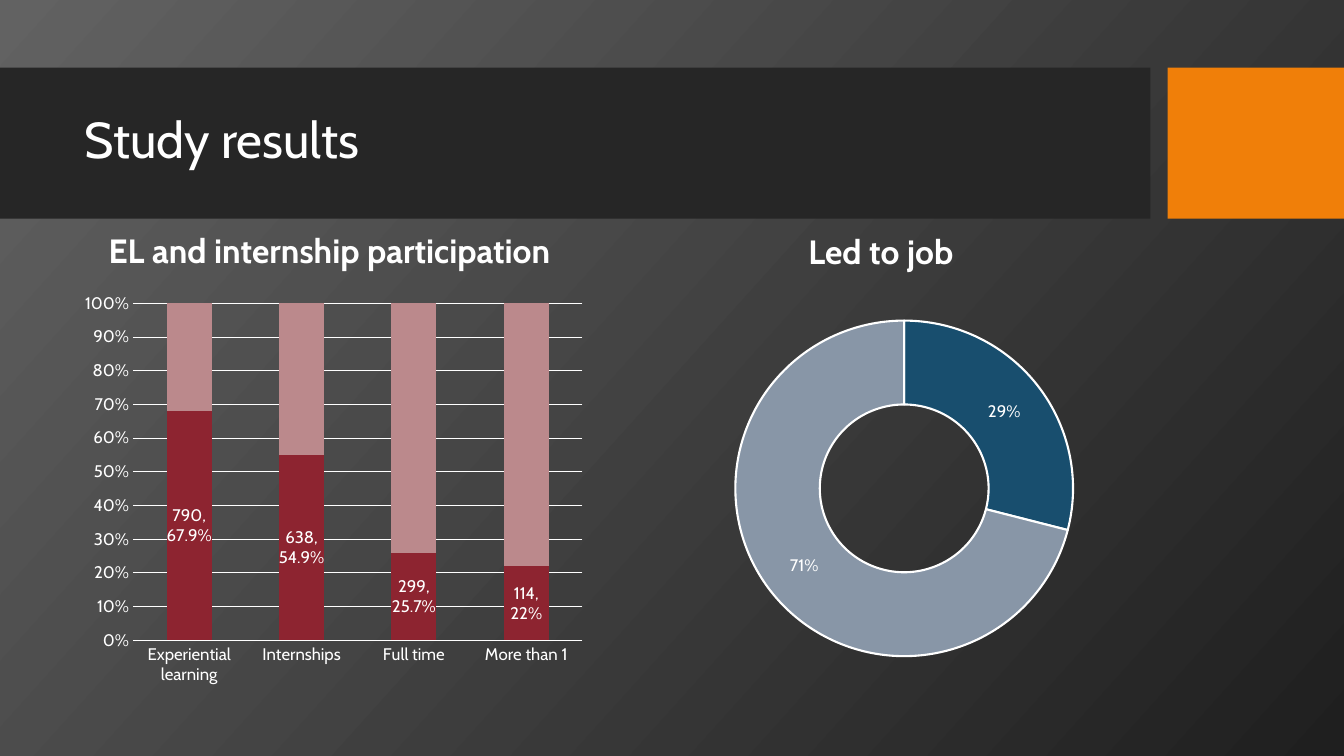
from lxml import etree
from pptx import Presentation
from pptx.chart.data import CategoryChartData
from pptx.dml.color import RGBColor
from pptx.enum.chart import XL_CHART_TYPE, XL_TICK_MARK
from pptx.enum.shapes import MSO_SHAPE
from pptx.enum.text import MSO_ANCHOR
from pptx.oxml.ns import qn
from pptx.util import Inches, Pt

STACKED = XL_CHART_TYPE.COLUMN_STACKED_100
DOUGHNUT = XL_CHART_TYPE.DOUGHNUT
NO_TICK = XL_TICK_MARK.NONE
RECT = MSO_SHAPE.RECTANGLE
MIDDLE = MSO_ANCHOR.MIDDLE
BOTTOM = MSO_ANCHOR.BOTTOM
WHITE = "FFFFFF"


def color(value):
    return RGBColor.from_string(value)


def apply(target, values):
    for name, value in values.items():
        setattr(target, name, value)


def paint(fill, value):
    fill.solid()
    fill.fore_color.rgb = color(value)


def draw_line(line, width):
    paint(line.fill, WHITE)
    line.width = Pt(width)


class SlideBuilder:
    face = "Cabin"

    def __init__(self, slide):
        self.slide = slide

    def style(self, font, size, bold=False):
        apply(font, {"name": self.face, "size": Pt(size), "bold": bold})
        font.color.rgb = color(WHITE)

    def background(self, start, end, angle):
        fill = self.slide.background.fill
        fill.gradient()
        fill.gradient_angle = 360 - angle
        for stop, value, position in zip(fill.gradient_stops, (start, end), (0, 1)):
            stop.color.rgb = color(value)
            stop.position = position

    def band(self, box, value):
        band = self.slide.shapes.add_shape(RECT, *map(Inches, box))
        band.shadow.inherit = False
        paint(band.fill, value)
        band.line.fill.background()

    def text(self, box, words, size, anchor, bold=False):
        frame = self.slide.shapes.add_textbox(*map(Inches, box)).text_frame
        apply(frame, {"word_wrap": True, "vertical_anchor": anchor})
        paragraph = frame.paragraphs[0]
        paragraph.line_spacing = 0.9
        run = paragraph.add_run()
        run.text = words
        self.style(run.font, size, bold)

    def chart(self, kind, box, categories, series):
        data = CategoryChartData()
        data.categories = categories
        for name, values in series.items():
            data.add_series(name, values)
        chart = self.slide.shapes.add_chart(kind, *map(Inches, box), data).chart
        apply(chart, {"has_legend": False, "has_title": False})
        self.style(chart.font, 10)
        return chart

    def participation(self, box, categories, series, fills, captions):
        chart = self.chart(STACKED, box, categories, series)
        plot = chart.plots[0]
        apply(plot, {"gap_width": 150, "overlap": 100, "vary_by_categories": False})
        for axis in (chart.category_axis, chart.value_axis):
            apply(axis, {"major_tick_mark": NO_TICK, "minor_tick_mark": NO_TICK})
            self.style(axis.tick_labels.font, 12)
        draw_line(chart.category_axis.format.line, 0.75)
        chart.value_axis.format.line.fill.background()
        draw_line(chart.value_axis.major_gridlines.format.line, 0.75)
        apply(chart.value_axis.tick_labels,
              {"number_format": "0%", "number_format_is_linked": False})
        for part, value in zip(plot.series, fills):
            paint(part.format.fill, value)
        participants = plot.series[0]
        self.style(participants.data_labels.font, 12)
        participants.data_labels.show_value = True
        for index, caption in enumerate(captions):
            frame = participants.points[index].data_label.text_frame
            frame.text = caption
            for paragraph in frame.paragraphs:
                for run in paragraph.runs:
                    self.style(run.font, 12)

    def outcome(self, box, categories, series, fills, hole, area):
        chart = self.chart(DOUGHNUT, box, categories, series)
        plot = chart.plots[0]
        plot.vary_by_categories = True
        for index, value in enumerate(fills):
            slice_format = plot.series[0].points[index].format
            paint(slice_format.fill, value)
            draw_line(slice_format.line, 1.5)
        labels = plot.series[0].data_labels
        apply(labels, {"show_percentage": True, "show_value": False,
                       "number_format": "0%", "number_format_is_linked": False})
        self.style(labels.font, 12)
        root = chart.element
        root.find(".//" + qn("c:holeSize")).set("val", str(hole))
        plot_area = root.find(".//" + qn("c:plotArea"))
        layout = plot_area.find(qn("c:layout"))
        if layout is None:
            layout = etree.Element(qn("c:layout"))
            plot_area.insert(0, layout)
        manual = etree.SubElement(layout, qn("c:manualLayout"))
        settings = {"layoutTarget": "inner", "xMode": "edge", "yMode": "edge"}
        settings.update(zip("xywh", area))
        for name, value in settings.items():
            etree.SubElement(manual, qn("c:" + name)).set("val", str(value))


def main():
    deck = Presentation()
    apply(deck, {"slide_width": Inches(13.33), "slide_height": Inches(7.5)})
    builder = SlideBuilder(deck.slides.add_slide(deck.slide_layouts[6]))
    builder.background("626262", "1F1F1F", 42)
    builder.band((0, 0.67, 11.41, 1.5), "262626")
    builder.band((11.58, 0.67, 1.75, 1.5), "F07F09")
    builder.text((0.74, 0.82, 10.51, 1.18), "Study results", 36, MIDDLE)
    builder.text((0.98, 1.78, 5.14, 0.96), "EL and internship participation",
                 24, BOTTOM, True)
    builder.participation(
        (0.74, 2.83, 5.14, 4.04),
        ["Experiential learning", "Internships", "Full time", "More than 1"],
        {"Series 1": (790, 638, 299, 256), "Series 2": (370, 520, 860, 910)},
        ("8D2430", "BB898C"),
        ("790,\n67.9%", "638,\n54.9%", "299,\n25.7%", "114,\n22%"))
    builder.text((7.92, 1.99, 4.89, 0.76), "Led to job", 24, BOTTOM, True)
    builder.outcome((5.66, 3.17, 5.38, 3.35), ["1", "2"], {"Series 1": (29, 71)},
                    ("184E6E", "8896A7"), 75, (0.25, 0, 0.73, 1))
    deck.save("out.pptx")


if __name__ == "__main__":
    main()
